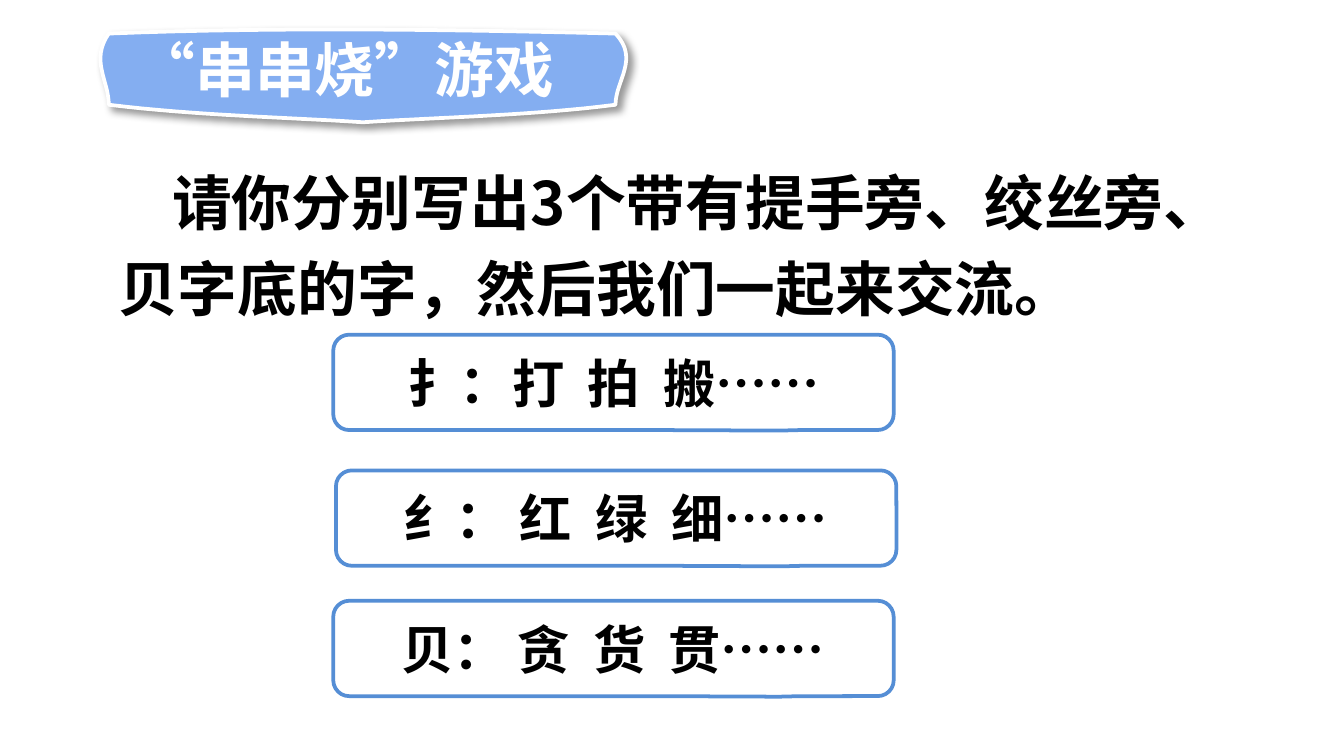
"""Build the radical word-chain game slide."""
from dataclasses import dataclass

import pptx
import pptx.dml.color
import pptx.enum.lang
import pptx.enum.shapes
import pptx.enum.text
import pptx.oxml.ns
import pptx.util
from lxml import etree
from pptx.util import Inches

Point = tuple[float, float]


@dataclass(frozen=True)
class Theme:
    font: str = "Noto Sans CJK SC"
    ink: str = "000000"
    paper: str = "FFFFFF"
    banner: str = "84AEF1"
    outline: str = "558ED5"
    heading_size: int = 32
    answer_size: int = 28
    line_width: int = 2


@dataclass(frozen=True)
class Answer:
    radical: str
    examples: tuple[str, ...]
    left: float
    top: float
    inset: float
    first_tab: float


THEME = Theme()
TAB_STEP = 0.56
ANSWERS = (
    Answer("扌：", ("打", "拍", "搬……"), 2.48, 2.49, 0.52, 1.34),
    Answer("纟： ", ("红", "绿", "细……"), 2.5, 3.5, 0.47, 1.43),
    Answer("贝： ", ("贪", "货", "贯……"), 2.48, 4.47, 0.47, 1.43),
)
BANNER_START = (0.81, 0.25)
BANNER_CURVES = (
    ((2.07, 0.2), (3.36, 0.22), (4.58, 0.25)),
    ((4.76, 0.44), (4.58, 0.6), (4.58, 0.78)),
    ((3.95, 0.86), (3.33, 0.87), (2.7, 0.91)),
    ((2.07, 0.87), (1.47, 0.86), (0.81, 0.78)),
    ((0.81, 0.6), (0.67, 0.45), (0.81, 0.25)),
)


def rgb(value: str) -> pptx.dml.color.RGBColor:
    """Return a colour from its hexadecimal form."""
    return pptx.dml.color.RGBColor.from_string(value)


def add_element(parent, tag: str, **attributes):
    """Append a drawing element with the given attributes."""
    values = {name: str(value) for name, value in attributes.items()}
    return etree.SubElement(parent, pptx.oxml.ns.qn(tag), values)


def add_span(para, text: str, size: int, color: str) -> None:
    """Add one bold run in the theme font."""
    span = para.add_run()
    span.text = text
    font = span.font
    font.name, font.size, font.bold = THEME.font, pptx.util.Pt(size), True
    font.color.rgb = rgb(color)
    font.language_id = pptx.enum.lang.MSO_LANGUAGE_ID.SIMPLIFIED_CHINESE
    add_element(span._r.get_or_add_rPr(), "a:ea", typeface=THEME.font)


def paint(shape, fill: str, line: str) -> None:
    """Give a shape a plain fill and outline."""
    shape.fill.solid()
    shape.fill.fore_color.rgb = rgb(fill)
    shape.line.color.rgb = rgb(line)
    shape.line.width = pptx.util.Pt(THEME.line_width)
    shape.shadow.inherit = False


def curve_points(start: Point, curve: tuple[Point, Point, Point], steps: int = 16) -> list[Point]:
    """Sample a cubic curve after its start point."""
    points = []
    for step in range(1, steps + 1):
        t = step / steps
        weights = ((1 - t) ** 3, 3 * t * (1 - t) ** 2, 3 * t * t * (1 - t), t ** 3)
        corners = (start, *curve)
        points.append(tuple(sum(w * c[axis] for w, c in zip(weights, corners)) for axis in (0, 1)))
    return points


def add_banner(page):
    """Draw the curved heading banner with its soft shadow."""
    points, start = [BANNER_START], BANNER_START
    for curve in BANNER_CURVES:
        points += curve_points(start, curve)
        start = curve[-1]
    corners = [(Inches(x), Inches(y)) for x, y in points]
    builder = page.shapes.build_freeform(*corners[0])
    builder.add_line_segments(corners[1:], close=True)
    banner = builder.convert_to_shape()
    paint(banner, THEME.banner, THEME.paper)
    effects = banner.element.spPr.find(pptx.oxml.ns.qn("a:effectLst"))
    shadow = add_element(effects, "a:outerShdw", blurRad=pptx.util.Pt(4), dist=pptx.util.Pt(3),
                         dir=45 * 60000, algn="tl", rotWithShape=0)
    color = add_element(shadow, "a:srgbClr", val=THEME.ink)
    add_element(color, "a:alpha", val=40000)
    return banner


def fill_placeholder(box, place: tuple[float, ...], text: str, color: str,
                     spacing: float, indent: float = 0) -> None:
    """Place a template placeholder and write its single paragraph."""
    box.left, box.top, box.width, box.height = map(Inches, place)
    frame = box.text_frame
    frame.word_wrap = True
    frame.auto_size = pptx.enum.text.MSO_AUTO_SIZE.SHAPE_TO_FIT_TEXT
    frame.vertical_anchor = pptx.enum.text.MSO_ANCHOR.TOP
    para = frame.paragraphs[0]
    properties = para._p.get_or_add_pPr()
    properties.set("marL", "0")
    properties.set("indent", str(Inches(indent)))
    add_element(properties, "a:buNone")
    para.alignment = pptx.enum.text.PP_ALIGN.LEFT
    para.line_spacing = spacing
    para.space_before = pptx.util.Pt(0)
    add_span(para, text, THEME.heading_size, color)


def add_answer(page, answer: Answer) -> None:
    """Draw one radical with its example characters."""
    box = page.shapes.add_shape(
        pptx.enum.shapes.MSO_SHAPE.ROUNDED_RECTANGULAR_CALLOUT,
        Inches(answer.left), Inches(answer.top), Inches(4.17), Inches(0.71))
    for index, value in enumerate((0.296, 0.506, 0.167)):
        box.adjustments[index] = value
    paint(box, THEME.paper, THEME.outline)
    frame = box.text_frame
    frame.word_wrap = True
    frame.margin_left = Inches(answer.inset)
    frame.vertical_anchor = pptx.enum.text.MSO_ANCHOR.MIDDLE
    para = frame.paragraphs[0]
    tabs = add_element(para._p.get_or_add_pPr(), "a:tabLst")
    for index in range(len(answer.examples) - 1):
        add_element(tabs, "a:tab", pos=Inches(answer.first_tab + index * TAB_STEP), algn="l")
    para.alignment = pptx.enum.text.PP_ALIGN.LEFT
    add_span(para, answer.radical + "\t".join(answer.examples), THEME.answer_size, THEME.ink)


def main() -> None:
    """Build and save the deck."""
    deck = pptx.Presentation()
    deck.slide_width = Inches(10)
    deck.slide_height = deck.slide_width * 9 // 16
    page = deck.slides.add_slide(deck.slide_layouts[1])
    title, body = page.shapes.title, page.placeholders[1]
    fill_placeholder(body, (0.78, 1.08, 8.44, 1.31),
                     "请你分别写出3个带有提手旁、绞丝旁、贝字底的字，然后我们一起来交流。",
                     THEME.ink, 1.2, indent=0.4)
    fill_placeholder(title, (0.91, 0.3, 3.39, 0.53), "“串串烧”游戏", THEME.paper, 0.8)
    add_banner(page).element.addnext(title.element)
    for answer in ANSWERS:
        add_answer(page, answer)
    deck.save("out.pptx")


if __name__ == "__main__":
    main()
